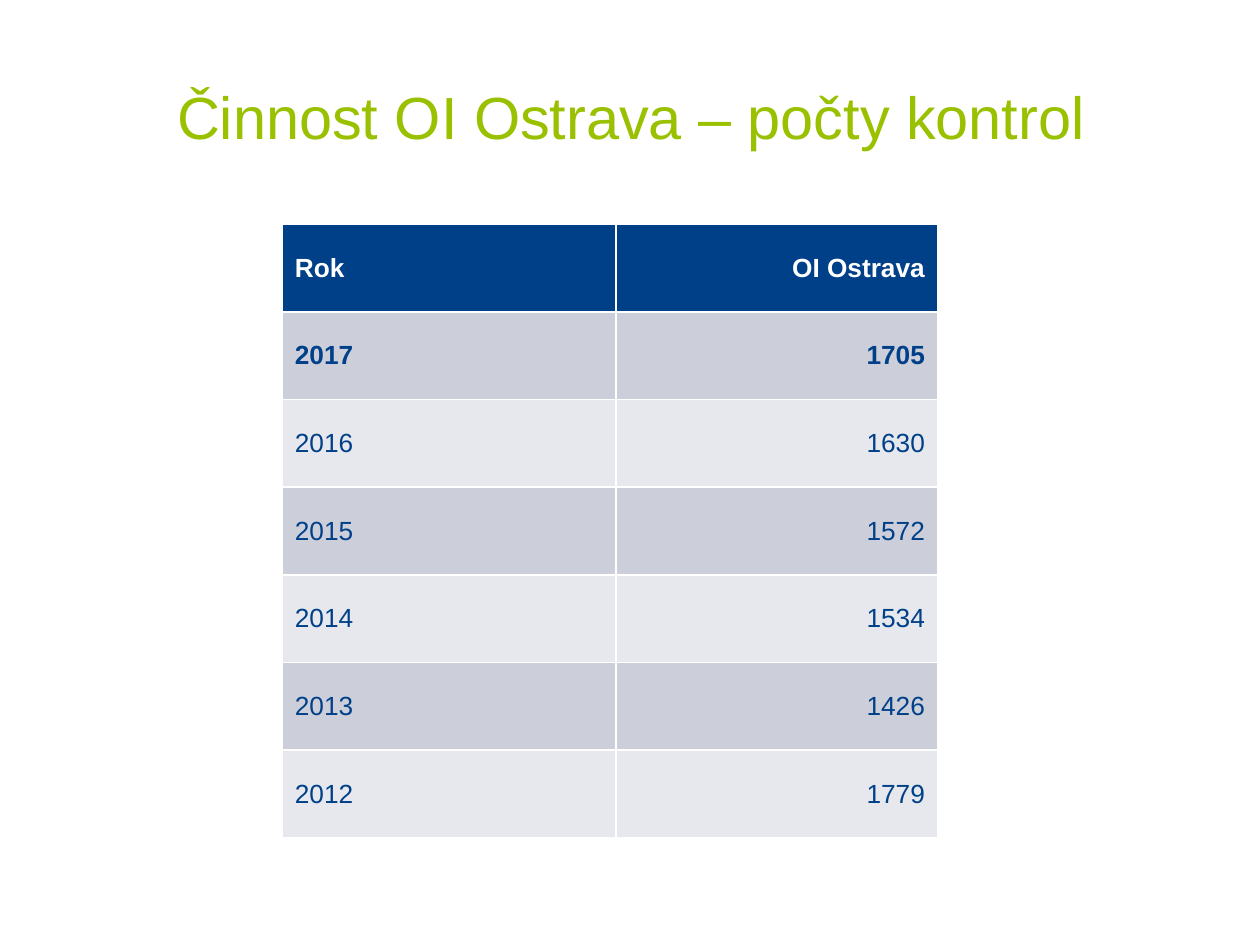
from dataclasses import dataclass

from pptx import Presentation
from pptx.dml.color import RGBColor
from pptx.enum.text import MSO_ANCHOR, PP_ALIGN
from pptx.util import Inches, Pt


@dataclass(frozen=True)
class Theme:
    font: str = "Arial"
    green: RGBColor = RGBColor.from_string("99C100")
    blue: RGBColor = RGBColor.from_string("004089")
    white: RGBColor = RGBColor.from_string("FFFFFF")
    bands: tuple = (RGBColor.from_string("CCCFDA"), RGBColor.from_string("E7E8ED"))
    title_size: Pt = Pt(34)
    table_size: Pt = Pt(15)


THEME = Theme()

INSPECTIONS = [
    ("Rok", "OI Ostrava"),
    ("2017", "1705"),
    ("2016", "1630"),
    ("2015", "1572"),
    ("2014", "1534"),
    ("2013", "1426"),
    ("2012", "1779"),
]
COLUMN_WIDTHS = (2.65, 2.55)
COLUMN_ALIGNS = (PP_ALIGN.LEFT, PP_ALIGN.RIGHT)
ROW_HEIGHT = 4.87 / len(INSPECTIONS)


def format_text(paragraph, align, size, color, bold):
    paragraph.alignment = align
    for name, value in {"name": THEME.font, "size": size, "bold": bold}.items():
        setattr(paragraph.runs[0].font, name, value)
    paragraph.runs[0].font.color.rgb = color


prs = Presentation()
prs.slide_width, prs.slide_height = Inches(10), Inches(7.5)
slide = prs.slides.add_slide(prs.slide_layouts.get_by_name("Title Only"))

# Title
title = slide.shapes.title
placement = {"left": 0.51, "top": 0.29, "width": 9, "height": 1.25}
for side, length in placement.items():
    setattr(title, side, Inches(length))
title.text_frame.text = "Činnost OI Ostrava – počty kontrol"
title.text_frame.vertical_anchor = MSO_ANCHOR.MIDDLE
format_text(title.text_frame.paragraphs[0], PP_ALIGN.CENTER,
            THEME.title_size, THEME.green, False)

# Inspections per year; the default table style draws the white rules
inspections = slide.shapes.add_table(
    len(INSPECTIONS), len(COLUMN_WIDTHS), Inches(2.24), Inches(1.78),
    Inches(sum(COLUMN_WIDTHS)), Inches(ROW_HEIGHT * len(INSPECTIONS))).table
for column, width in zip(inspections.columns, COLUMN_WIDTHS):
    column.width = Inches(width)

for row_index, (row, values) in enumerate(zip(inspections.rows, INSPECTIONS)):
    row.height = Inches(ROW_HEIGHT)
    is_header = row_index == 0
    is_latest_year = row_index == 1
    fill_color = THEME.blue if is_header else THEME.bands[(row_index - 1) % 2]
    text_color = THEME.white if is_header else THEME.blue
    for cell, value, align in zip(row.cells, values, COLUMN_ALIGNS):
        cell.text = value
        cell.vertical_anchor = MSO_ANCHOR.MIDDLE
        cell.fill.solid()
        cell.fill.fore_color.rgb = fill_color
        format_text(cell.text_frame.paragraphs[0], align, THEME.table_size,
                    text_color, is_header or is_latest_year)

prs.save("out.pptx")
